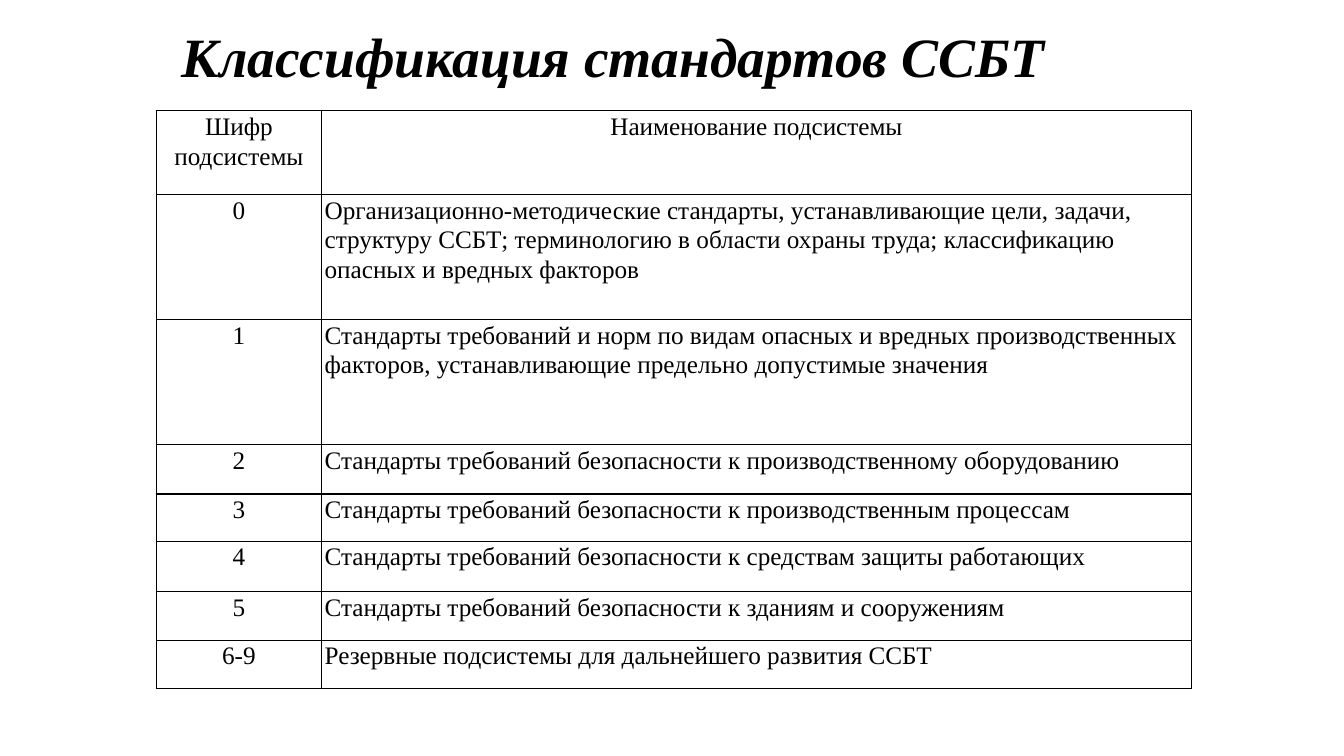
import pptx
import pptx.dml.color
import pptx.enum.text
import pptx.oxml
import pptx.oxml.ns
import pptx.util

Pt = pptx.util.Pt
Align = pptx.enum.text.PP_ALIGN
Anchor = pptx.enum.text.MSO_ANCHOR

BLACK = pptx.dml.color.RGBColor(0, 0, 0)
FONT = "Times New Roman"

COLUMN_WIDTHS = (118.1, 621.4)
ROWS = (
    (59.8, "Шифр\vподсистемы", "Наименование подсистемы"),
    (89.3, "0", "Организационно-методические стандарты, устанавливающие цели, "
     "задачи, структуру ССБТ; терминологию в области охраны труда; "
     "классификацию опасных и вредных факторов"),
    (89.3, "1", "Стандарты требований и норм по видам опасных и вредных "
     "производственных факторов, устанавливающие предельно допустимые значения"),
    (35.3, "2", "Стандарты требований безопасности к производственному оборудованию"),
    (33.8, "3", "Стандарты требований безопасности к производственным процессам"),
    (36, "4", "Стандарты требований безопасности к средствам защиты работающих"),
    (34.6, "5", "Стандарты требований безопасности к зданиям и сооружениям"),
    (34.6, "6-9", "Резервные подсистемы для дальнейшего развития ССБТ"),
)

TITLE_FRAME = {"word_wrap": True, "vertical_anchor": Anchor.BOTTOM,
               "margin_bottom": Pt(33)}
TITLE_PARA = {"alignment": Align.CENTER, "line_spacing": 0.9}
TITLE_FONT = {"name": FONT, "size": Pt(39.6), "bold": True, "italic": True}
CELL_FORMAT = {"margin_left": Pt(2.2), "margin_right": Pt(2.2),
               "margin_top": 0, "margin_bottom": 0,
               "vertical_anchor": Anchor.TOP}
HEADER_PARA = {"alignment": Align.CENTER, "line_spacing": 1.08,
               "space_before": Pt(2), "space_after": Pt(8)}
BODY_PARA = {"line_spacing": 1.07, "space_before": Pt(0), "space_after": Pt(8)}
CELL_FONT = {"name": FONT, "size": Pt(18), "bold": False}


def apply_format(target, values):
    """Set every attribute named in values on target."""
    for name, value in values.items():
        setattr(target, name, value)


def write_text(frame, text, para_format, font_format):
    """Fill a text frame with one formatted black paragraph."""
    para = frame.paragraphs[0]
    para.text = text
    apply_format(para, para_format)
    for span in para.runs:
        apply_format(span.font, font_format)
        span.font.color.rgb = BLACK


def add_title(page, text):
    """Add the slide heading."""
    box = page.shapes.add_textbox(Pt(24), Pt(36), Pt(828), Pt(61))
    apply_format(box.text_frame, TITLE_FRAME)
    write_text(box.text_frame, text, TITLE_PARA, TITLE_FONT)


def add_borders(cell):
    """Draw a thin black line on all four sides of a cell."""
    properties = cell._tc.get_or_add_tcPr()
    for index, side in enumerate(("lnL", "lnR", "lnT", "lnB")):
        line = pptx.oxml.parse_xml(
            f'<a:{side} {pptx.oxml.ns.nsdecls("a")} w="{Pt(1)}">'
            f'<a:solidFill><a:srgbClr val="{BLACK}"/></a:solidFill></a:{side}>')
        properties.insert(index, line)


def add_standards_table(page):
    """Add the table of subsystem codes and names."""
    heights = [row[0] for row in ROWS]
    frame = page.shapes.add_table(
        len(ROWS), len(COLUMN_WIDTHS), Pt(111.6), Pt(79.2),
        Pt(sum(COLUMN_WIDTHS)), Pt(sum(heights)))
    table = frame.table
    apply_format(table, {"first_row": False, "horz_banding": False})
    for column, width in zip(table.columns, COLUMN_WIDTHS):
        column.width = Pt(width)
    for row_index, (height, *texts) in enumerate(ROWS):
        table.rows[row_index].height = Pt(height)
        for column_index, text in enumerate(texts):
            cell = table.cell(row_index, column_index)
            align = Align.LEFT if column_index else Align.CENTER
            body = {**BODY_PARA, "alignment": align}
            apply_format(cell, CELL_FORMAT)
            cell.fill.background()
            add_borders(cell)
            write_text(cell.text_frame, text,
                       body if row_index else HEADER_PARA, CELL_FONT)


def main():
    """Build the deck and save it."""
    deck = pptx.Presentation()
    apply_format(deck, {"slide_width": Pt(960), "slide_height": Pt(540)})
    page = deck.slides.add_slide(deck.slide_layouts[6])
    add_title(page, "Классификация стандартов ССБТ")
    add_standards_table(page)
    deck.save("out.pptx")


if __name__ == "__main__":
    main()
